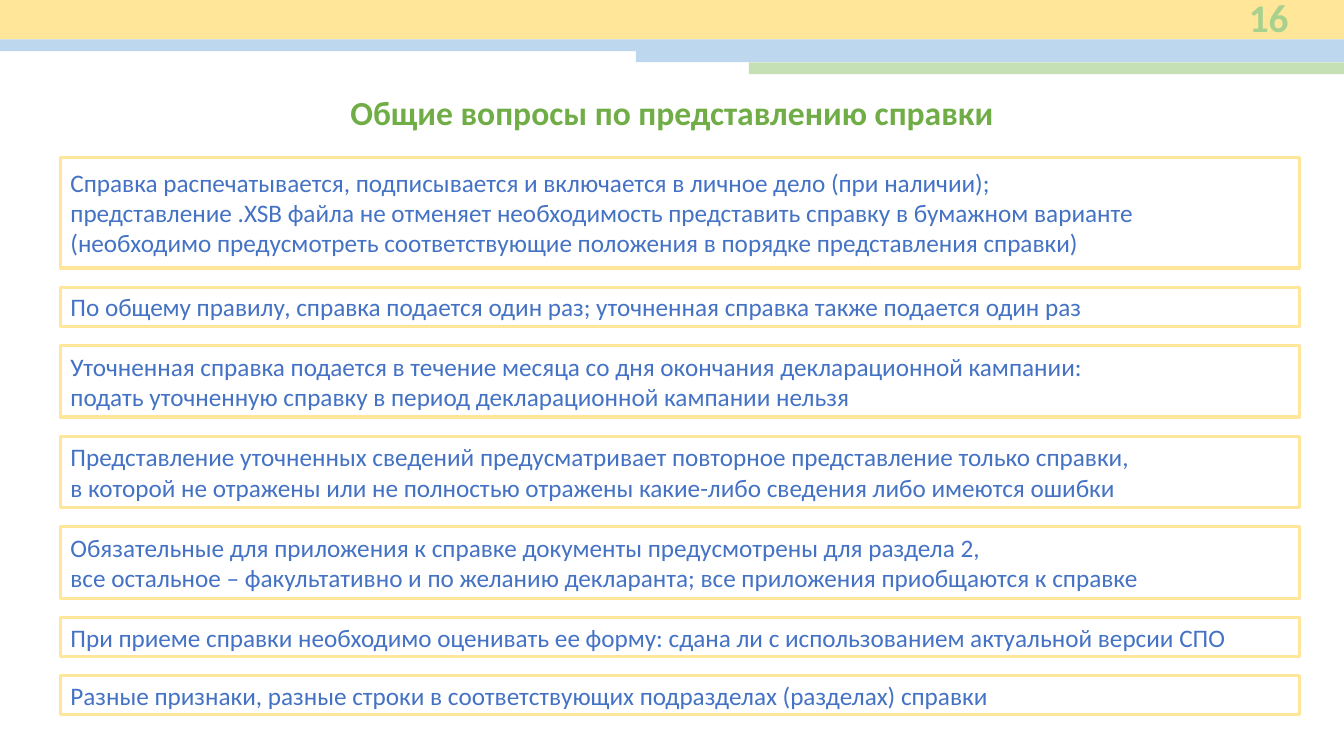
from pptx import Presentation
from pptx.dml.color import RGBColor
from pptx.enum.shapes import MSO_SHAPE
from pptx.enum.text import MSO_ANCHOR, PP_ALIGN
from pptx.util import Pt

PAGE_NUMBER = "16"
TITLE = "Общие вопросы по представлению справки"
RULES = [
    ["Справка распечатывается, подписывается и включается в личное дело (при наличии);",
     "представление .XSB файла не отменяет необходимость представить справку в бумажном варианте",
     "(необходимо предусмотреть соответствующие положения в порядке представления справки)"],
    ["По общему правилу, справка подается один раз; уточненная справка также подается один раз"],
    ["Уточненная справка подается в течение месяца со дня окончания декларационной кампании:",
     "подать уточненную справку в период декларационной кампании нельзя"],
    ["Представление уточненных сведений предусматривает повторное представление только справки,",
     "в которой не отражены или не полностью отражены какие-либо сведения либо имеются ошибки"],
    ["Обязательные для приложения к справке документы предусмотрены для раздела 2,",
     "все остальное – факультативно и по желанию декларанта; все приложения приобщаются к справке"],
    ["При приеме справки необходимо оценивать ее форму: сдана ли с использованием "
     "актуальной версии СПО"],
    ["Разные признаки, разные строки в соответствующих подразделах (разделах) справки"],
]

THEME = {
    "font": "Calibri",
    "yellow": "FFE699", "blue": "BDD7EE", "green": "C5E0B4",
    "number": {"size": Pt(28), "bold": True, "color": "A9D18E"},
    "title": {"size": Pt(24), "bold": True, "color": "70AD47"},
    "rule": {"size": Pt(18), "bold": False, "color": "4472C4"},
}

WIDTH, HEIGHT = 960, 540
# Left, top, height, colour; every band runs to the right edge
BANDS = [
    (0, 0, 28.1, "yellow"),
    (0, 28.1, 8.5, "blue"),
    (454.3, 36, 8.5, "blue"),
    (534.9, 44.5, 8.5, "green"),
]
LEFT, RULES_TOP, RULES_WIDTH, GAP = 43.2, 112.3, 884.9, 13.6
BOX_HEIGHTS = {1: 28.1, 2: 51.1, 3: 79.2}  # by number of lines


def write(shape, lines, style, align):
    tf = shape.text_frame
    tf.word_wrap = True
    tf.vertical_anchor = MSO_ANCHOR.MIDDLE
    p = tf.paragraphs[0]
    p.text = "\n".join(lines)
    p.alignment = align
    for r in p.runs:
        r.font.name = THEME["font"]
        for name, value in THEME[style].items():
            if name == "color":
                r.font.color.rgb = RGBColor.from_string(value)
            else:
                setattr(r.font, name, value)


def add_rect(s, left, top, width, height, fill=None, line=None):
    sp = s.shapes.add_shape(MSO_SHAPE.RECTANGLE, Pt(left), Pt(top), Pt(width), Pt(height))
    sp.shadow.inherit = False
    for part, color in ((sp.fill, fill), (sp.line.fill, line)):
        if color:
            part.solid()
            part.fore_color.rgb = RGBColor.from_string(THEME[color])
        else:
            part.background()
    if line:
        sp.line.width = Pt(2.25)
    return sp


def add_text(s, left, top, width, height, text, style, align):
    box = s.shapes.add_textbox(Pt(left), Pt(top), Pt(width), Pt(height))
    write(box, [text], style, align)


def main():
    prs = Presentation()
    prs.slide_width, prs.slide_height = Pt(WIDTH), Pt(HEIGHT)
    s = prs.slides.add_slide(prs.slide_layouts[6])

    for left, top, height, color in BANDS:
        add_rect(s, left, top, WIDTH - left, height, fill=color)
    add_text(s, 837.4, -3.6, 90, 31.7, PAGE_NUMBER, "number", PP_ALIGN.RIGHT)
    add_text(s, LEFT, 61.9, 873.4, 36, TITLE, "title", PP_ALIGN.CENTER)

    top = RULES_TOP
    for lines in RULES:
        height = BOX_HEIGHTS[len(lines)]
        sp = add_rect(s, LEFT, top, RULES_WIDTH, height, line="yellow")
        write(sp, lines, "rule", PP_ALIGN.LEFT)
        top += height + GAP

    prs.save("out.pptx")


if __name__ == "__main__":
    main()
